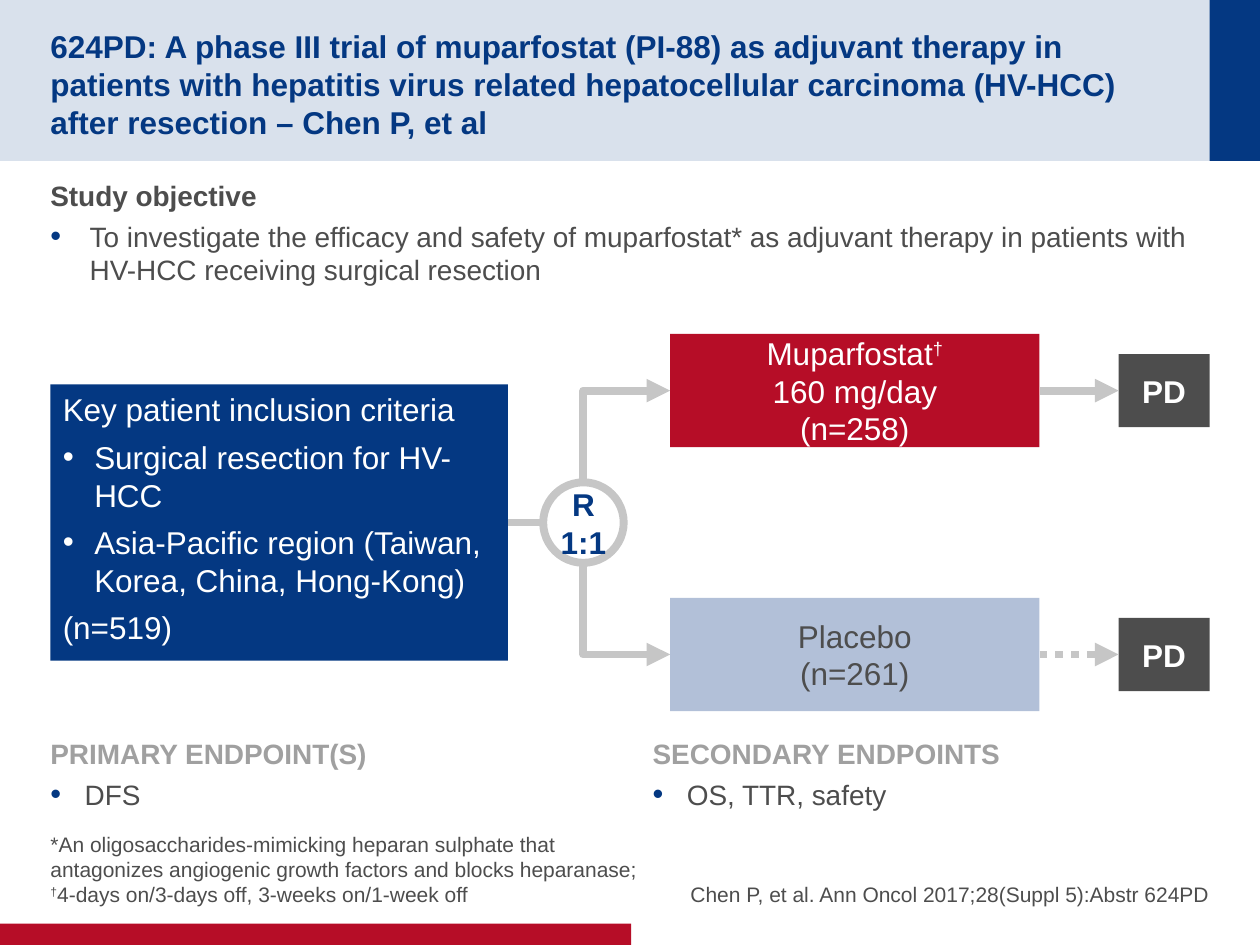
from collections import namedtuple

from pptx import Presentation
from pptx.dml.color import RGBColor
from pptx.enum import dml, shapes, text
from pptx.oxml.ns import qn
from pptx.util import Pt
from lxml import etree

NAVY = RGBColor(0x04, 0x38, 0x82)
PALE = RGBColor(0xD9, 0xE1, 0xEC)
RED = RGBColor(0xB6, 0x0D, 0x27)
SKY = RGBColor(0xB2, 0xC0, 0xD8)
DARK = RGBColor(0x4D, 0x4D, 0x4D)
SILVER = RGBColor(0xC6, 0xC6, 0xC6)
GRAY = RGBColor(0xA0, 0xA0, 0xA0)
WHITE = RGBColor(0xFF, 0xFF, 0xFF)

LEFT, RIGHT, CENTER = text.PP_ALIGN.LEFT, text.PP_ALIGN.RIGHT, text.PP_ALIGN.CENTER
TOP, MIDDLE, BOTTOM = text.MSO_ANCHOR.TOP, text.MSO_ANCHOR.MIDDLE, text.MSO_ANCHOR.BOTTOM
RECT, OVAL = shapes.MSO_SHAPE.RECTANGLE, shapes.MSO_SHAPE.OVAL
STRAIGHT, ELBOW = shapes.MSO_CONNECTOR.STRAIGHT, shapes.MSO_CONNECTOR.ELBOW

Line = namedtuple("Line", "words color bold indent bullet", defaults=(DARK, False, 0, None))


def add_bullet(paragraph, indent, color):
    """Hang a bullet in the given indent; a navy one is drawn slightly larger."""
    props = paragraph._p.get_or_add_pPr()
    props.set("marL", str(Pt(indent)))
    props.set("indent", str(-Pt(indent)))
    tint = etree.SubElement(props, qn("a:buClr"))
    etree.SubElement(tint, qn("a:srgbClr")).set("val", str(color))
    etree.SubElement(props, qn("a:buSzPct")).set("val", "110000" if color == NAVY else "100000")
    etree.SubElement(props, qn("a:buFont")).set("typeface", "Arial")
    etree.SubElement(props, qn("a:buChar")).set("char", "•")


def write(frame, lines, size, align=LEFT, anchor=TOP, gap=0, insets=(0, 3.6, 0, 3.6), wrap=True):
    """Fill a text frame with lines, raising every dagger to superscript."""
    frame.word_wrap = wrap
    frame.auto_size = text.MSO_AUTO_SIZE.NONE
    frame.vertical_anchor = anchor
    (frame.margin_left, frame.margin_top,
     frame.margin_right, frame.margin_bottom) = map(Pt, insets)
    frame.text = "\n".join(line.words for line in lines)
    for paragraph, line in zip(frame.paragraphs, lines):
        paragraph.alignment = align
        paragraph.space_before = Pt(0)
        paragraph.space_after = Pt(gap)
        if line.bullet is not None:
            add_bullet(paragraph, line.indent, line.bullet)
        before, dagger, after = line.words.partition("†")
        if dagger:
            paragraph.runs[0].text = before
            paragraph.add_run().text = dagger
            paragraph.runs[1].font._element.set("baseline", "30000")
            if after:
                paragraph.add_run().text = after
        for run in paragraph.runs:
            run.font.name = "Arial"
            run.font.size = Pt(size)
            run.font.bold = line.bold
            run.font.color.rgb = line.color


def add_text(slide, box, lines, size, **options):
    write(slide.shapes.add_textbox(*map(Pt, box)).text_frame, lines, size, **options)


def add_block(slide, box, fill, kind=RECT):
    block = slide.shapes.add_shape(kind, *map(Pt, box))
    block.shadow.inherit = False
    block.line.fill.background()
    if fill is None:
        block.fill.background()
    else:
        block.fill.solid()
        block.fill.fore_color.rgb = fill
    return block


def add_label(slide, box, fill, lines):
    block = add_block(slide, box, fill)
    write(block.text_frame, lines, 18, align=CENTER, anchor=MIDDLE, insets=(7.2, 0, 7.2, 0))
    return block


def add_line(slide, start, end, kind=STRAIGHT, arrow=None, dash=None):
    """Draw a flow line; arrow is "headEnd" (at start) or "tailEnd" (at end)."""
    link = slide.shapes.add_connector(kind, *map(Pt, (*start, *end)))
    link.line.color.rgb = SILVER
    link.line.width = Pt(4.5)
    if dash:
        link.line.dash_style = dash
    if arrow:
        etree.SubElement(link.line._get_or_add_ln(), qn("a:" + arrow)).set("type", "triangle")
    props = link._element.spPr
    etree.SubElement(props, qn("a:effectLst"))
    if kind == ELBOW:
        props.find(qn("a:prstGeom")).set("prst", "bentConnector2")
    return link


def add_header(slide, box, words):
    left, top, width, height = box
    add_block(slide, box, PALE)
    add_block(slide, (left + width - 28.8, top, 28.8, height), NAVY)
    title = slide.shapes.title
    title.left, title.top = Pt(left + 28.8), Pt(top + 14.4)
    title.width, title.height = Pt(648.7), Pt(63.4)
    write(title.text_frame, [Line(words, NAVY, True)], 18, anchor=MIDDLE, insets=(0, 3.6, 0, 0))
    title.element.getparent().append(title.element)


def add_section(slide, box, heading, color, item, indent, inset=0):
    lines = [Line(heading, color, True), Line(item, indent=indent, bullet=NAVY)]
    add_text(slide, box, lines, 16, gap=4, insets=(inset, 3.6, inset, 3.6))


def add_arm(slide, box, fill, lines, dash=None):
    """Place a treatment arm and its progression box; return the arm's left middle."""
    left, top, width, height = box
    middle = top + height / 2
    arm = add_label(slide, (left, middle - 32.4, 211, 64.8), fill, lines)
    outcome = add_label(slide, (left + width - 52, middle - 20.9, 52, 41.8), DARK,
                        [Line("PD", WHITE, True)])
    link = add_line(slide, (left + 211, middle), (left + width - 52, middle),
                    arrow="tailEnd", dash=dash)
    link.begin_connect(arm, 3)
    link.end_connect(outcome, 1)
    return left, middle


def add_trial_flow(slide, box):
    left, top, width, height = box
    middle = top + height / 2
    criteria = add_block(slide, (left, middle - 79, 261.4, 158), NAVY)
    bulleted = ["Surgical resection for HV-HCC",
                "Asia-Pacific region (Taiwan, Korea, China, Hong-Kong)"]
    write(criteria.text_frame,
          [Line("Key patient inclusion criteria", WHITE),
           *(Line(words, WHITE, indent=18, bullet=WHITE) for words in bulleted),
           Line("(n=519)", WHITE)],
          18, gap=5.4, insets=(7.2, 3.6, 7.2, 3.6))

    diameter, center = 46, left + 304.6
    radius = diameter / 2
    split = add_block(slide, (center - radius, middle - radius, diameter, diameter), None, OVAL)
    split.line.color.rgb = SILVER
    split.line.width = Pt(4.5)
    write(split.text_frame, [Line("R", NAVY, True), Line("1:1", NAVY, True)], 18,
          align=CENTER, anchor=MIDDLE, wrap=False)
    link = add_line(slide, (left + 261.4, middle), (center - radius, middle))
    link.begin_connect(criteria, 3)

    arm_left, arm_width = left + 354.2, width - 354.2
    drug = [Line(words, WHITE) for words in ("Muparfostat†", "160 mg/day", "(n=258)")]
    placebo = [Line(words) for words in ("Placebo", "(n=261)")]
    upper = add_arm(slide, (arm_left, top, arm_width, 64.8), RED, drug)
    lower = add_arm(slide, (arm_left, top + height - 64.8, arm_width, 64.8), SKY, placebo,
                    dash=dml.MSO_LINE.ROUND_DOT)
    add_line(slide, upper, (center, middle - radius), ELBOW, "headEnd")
    add_line(slide, lower, (center, middle + radius), ELBOW, "headEnd")


def add_footer(slide, box):
    left, top, width, height = box
    note = ("*An oligosaccharides-mimicking heparan sulphate that antagonizes angiogenic "
            "growth factors and blocks heparanase; †4-days on/3-days off, 3-weeks on/1-week off")
    source = "Chen P, et al. Ann Oncol 2017;28(Suppl 5):Abstr 624PD"
    bottom = dict(anchor=BOTTOM, insets=(0, 0, 0, 0))
    add_text(slide, (left, top, 337, height), [Line(note)], 12, **bottom)
    add_text(slide, (left + 337, top, width - 337, height), [Line(source)], 12,
             align=RIGHT, **bottom)
    add_block(slide, (0, 527.8, 360.7, 12.2), RED)


def main():
    deck = Presentation()
    deck.slide_width, deck.slide_height = Pt(720), Pt(540)
    slide = deck.slides.add_slide(deck.slide_layouts[5])
    add_header(slide, (0, 0, 720, 92),
               "624PD: A phase III trial of muparfostat (PI-88) as adjuvant therapy in patients "
               "with hepatitis virus related hepatocellular carcinoma (HV-HCC) after resection "
               "– Chen P, et al")
    add_section(slide, (28.8, 98.6, 662.4, 75), "Study objective", DARK,
                "To investigate the efficacy and safety of muparfostat* as adjuvant therapy "
                "in patients with HV-HCC receiving surgical resection", 22.5)
    add_trial_flow(slide, (28.8, 190.8, 662.4, 215.6))
    add_section(slide, (28.8, 417.6, 325.4, 62.6), "PRIMARY ENDPOINT(S)", GRAY, "DFS", 19.6)
    add_section(slide, (365.8, 417.6, 325.4, 62.6), "SECONDARY ENDPOINTS", GRAY,
                "OS, TTR, safety", 19.6, inset=7.2)
    add_footer(slide, (28.8, 480.2, 662.4, 38.2))
    deck.save("out.pptx")


if __name__ == "__main__":
    main()
